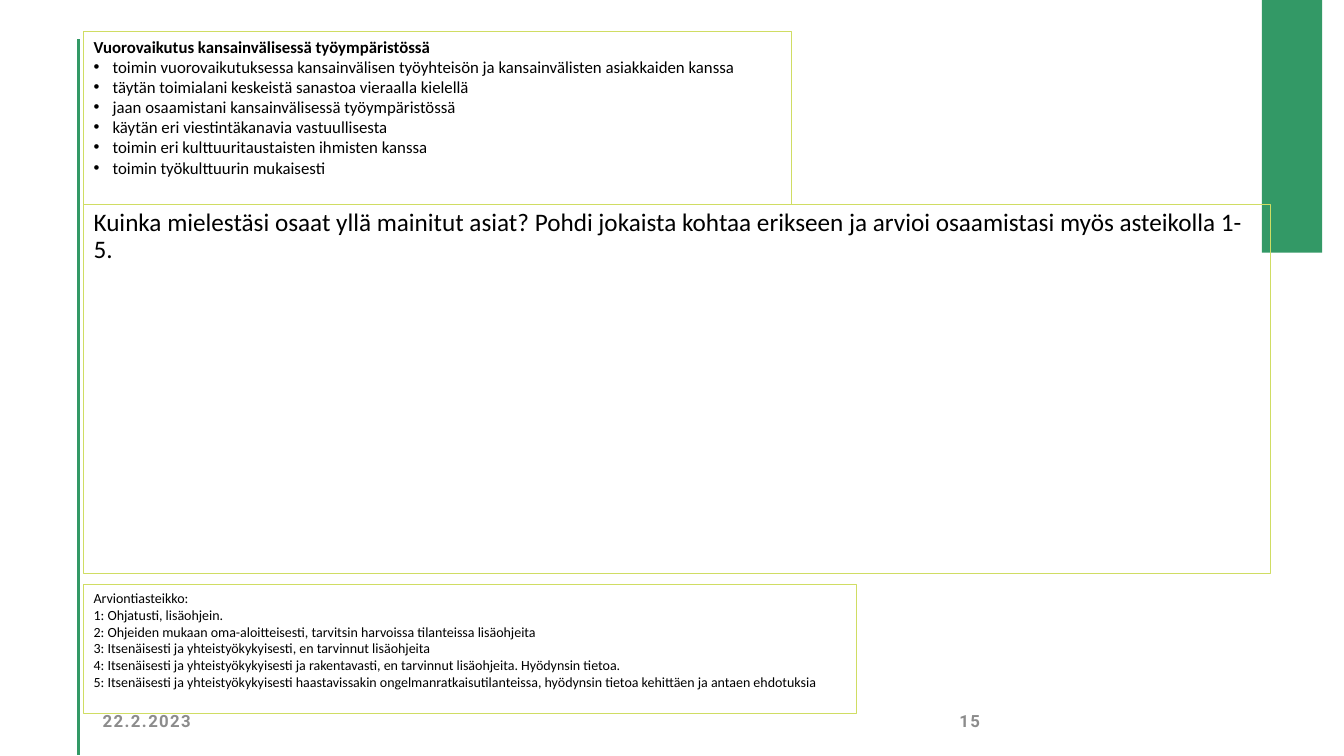
from lxml import etree
from pptx import Presentation
from pptx.dml.color import RGBColor
from pptx.enum.shapes import MSO_CONNECTOR, MSO_SHAPE
from pptx.enum.text import MSO_ANCHOR, PP_ALIGN
from pptx.oxml.ns import qn
from pptx.util import Cm, Pt

# Content
GOALS_TITLE = "Vuorovaikutus kansainvälisessä työympäristössä"
GOALS = [
    "toimin vuorovaikutuksessa kansainvälisen työyhteisön ja kansainvälisten asiakkaiden kanssa",
    "täytän toimialani keskeistä sanastoa vieraalla kielellä",
    "jaan osaamistani kansainvälisessä työympäristössä",
    "käytän eri viestintäkanavia vastuullisesta",
    "toimin eri kulttuuritaustaisten ihmisten kanssa",
    "toimin työkulttuurin mukaisesti",
]
QUESTION = ("Kuinka mielestäsi osaat yllä mainitut asiat? Pohdi jokaista kohtaa "
            "erikseen ja arvioi osaamistasi myös asteikolla 1-5.")
SCALE_TITLE = "Arviontiasteikko:"
SCALE = [
    "Ohjatusti, lisäohjein.",
    "Ohjeiden mukaan oma-aloitteisesti, tarvitsin harvoissa tilanteissa lisäohjeita",
    "Itsenäisesti ja yhteistyökykyisesti, en tarvinnut lisäohjeita",
    "Itsenäisesti ja yhteistyökykyisesti ja rakentavasti, en tarvinnut lisäohjeita. "
    "Hyödynsin tietoa.",
    "Itsenäisesti ja yhteistyökykyisesti haastavissakin ongelmanratkaisutilanteissa, "
    "hyödynsin tietoa kehittäen ja antaen ehdotuksia",
]
DATE, PAGE_NUMBER = "22.2.2023", "15"

# Colours and measures (cm)
GREEN = RGBColor(0x33, 0x99, 0x66)
LIME = RGBColor(0xD0, 0xDD, 0x63)
BLACK = RGBColor(0, 0, 0)
GREY = RGBColor(0x8C, 0x8C, 0x8C)
SLIDE_WIDTH, SLIDE_HEIGHT = 33.87, 19.05
BOX_LEFT = 2.11
GOALS_TOP, GOALS_HEIGHT = 0.79, 4.37
QUESTION_TOP = GOALS_TOP + GOALS_HEIGHT
FOOTER_TOP, FOOTER_HEIGHT = 17.65, 1.02
RULE_LEFT = 1.98
BULLET_INDENT = 0.48


def add_rectangle(left, top, width, height, fill=None, line=None):
    shape = slide.shapes.add_shape(MSO_SHAPE.RECTANGLE, Cm(left), Cm(top),
                                   Cm(width), Cm(height))
    shape.shadow.inherit = False
    if fill is None:
        shape.fill.background()
    else:
        shape.fill.solid()
        shape.fill.fore_color.rgb = fill
    if line is None:
        shape.line.fill.background()
    else:
        shape.line.color.rgb = line
        shape.line.width = Pt(0.75)
    return shape


def write(frame, text, size, color=BLACK, font="Calibri", bold=False,
          bullet=False, line_spacing=None, tracking=None, anchor=MSO_ANCHOR.TOP):
    """Write one paragraph, filling the empty first one before adding more."""
    frame.word_wrap = True
    frame.vertical_anchor = anchor
    first = frame.paragraphs[0]
    paragraph = frame.add_paragraph() if first.runs else first
    paragraph.alignment = PP_ALIGN.LEFT
    if line_spacing:
        paragraph.line_spacing = line_spacing
    if bullet:
        properties = paragraph._p.get_or_add_pPr()
        properties.set("marL", str(Cm(BULLET_INDENT)))
        properties.set("indent", str(-Cm(BULLET_INDENT)))
        etree.SubElement(properties, qn("a:buFont")).set("typeface", "Arial")
        etree.SubElement(properties, qn("a:buChar")).set("char", "•")
    run = paragraph.add_run()
    run.text = text
    run.font.name, run.font.size, run.font.bold = font, Pt(size), bold
    run.font.color.rgb = color
    if tracking:
        run._r.get_or_add_rPr().set("spc", str(tracking))


presentation = Presentation()
presentation.slide_width, presentation.slide_height = Cm(SLIDE_WIDTH), Cm(SLIDE_HEIGHT)
slide = presentation.slides.add_slide(presentation.slide_layouts[6])

# Green rule and corner block
rule = slide.shapes.add_connector(MSO_CONNECTOR.STRAIGHT, Cm(RULE_LEFT), Cm(0.99),
                                  Cm(RULE_LEFT), Cm(19.02))
rule.line.color.rgb = GREEN
rule.line.width = Pt(2)
etree.SubElement(rule._element.spPr, qn("a:effectLst"))
add_rectangle(31.8, -0.03, 1.52, 6.4, fill=GREEN)

# Question with room for the answer
question = add_rectangle(BOX_LEFT, QUESTION_TOP, 29.92, 9.3, line=LIME)
write(question.text_frame, QUESTION, 18, line_spacing=0.9)

# Footer
for text, left, width in [(DATE, 2.34, 7.62), (PAGE_NUMBER, 23.93, 6.45)]:
    footer = slide.shapes.add_textbox(Cm(left), Cm(FOOTER_TOP), Cm(width), Cm(FOOTER_HEIGHT))
    write(footer.text_frame, text, 12, color=GREY, font="Roboto", bold=True,
          tracking=100, anchor=MSO_ANCHOR.MIDDLE)

# Grading scale
scale = add_rectangle(BOX_LEFT, 14.73, 19.48, 3.25, line=LIME).text_frame
write(scale, SCALE_TITLE, 10)
for grade, description in enumerate(SCALE, start=1):
    write(scale, f"{grade}: {description}", 10)

# Learning goals
goals = add_rectangle(BOX_LEFT, GOALS_TOP, 17.83, GOALS_HEIGHT, line=LIME).text_frame
write(goals, GOALS_TITLE, 12, bold=True)
for goal in GOALS:
    write(goals, goal, 12, bullet=True)

presentation.save("out.pptx")
